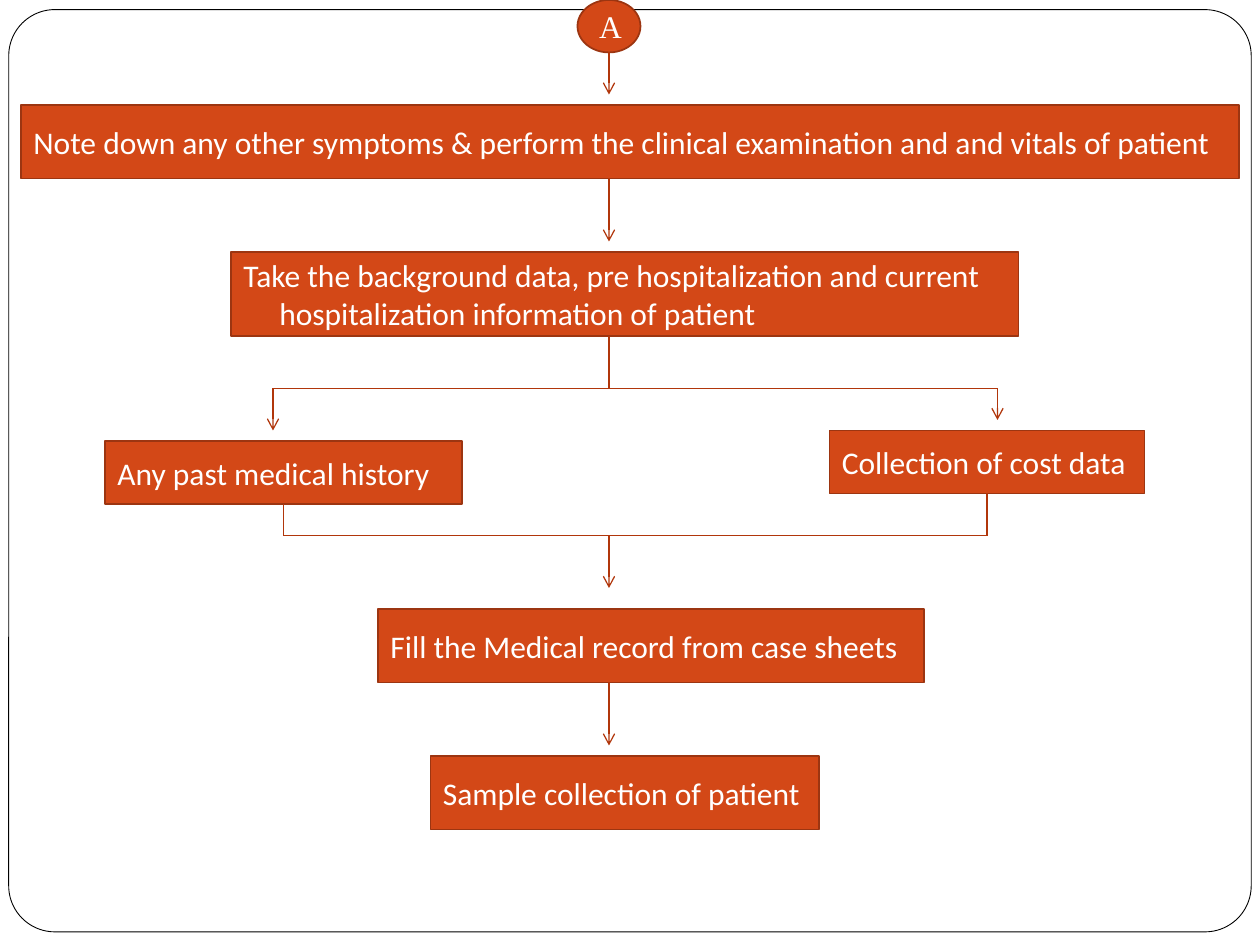
"""Build a patient data collection flowchart slide."""
from lxml import etree
from pptx import Presentation
from pptx import util as u
from pptx.dml.color import RGBColor
from pptx.enum import shapes, text
from pptx.oxml.ns import qn

COLORS = {"fill": "D34817", "edge": "9C3511", "arrow": "B1360B",
          "white": "FFFFFF", "black": "000000"}
AXIS = 348
SPLIT_Y, MERGE_Y = 222, 306
SPLIT_X, MERGE_X = (156, 570), (162, 564)
HANGING = 20.5

STEPS = [
    ("Note down any other symptoms & perform the clinical examination and and vitals of patient",
     (12, 60, 696, 42), 0),
    ("Take the background data, pre hospitalization and current hospitalization information of patient",
     (132, 144, 450, 48), HANGING),
    ("Any past medical history", (60, 252, 204, 36), 0),
    ("Fill the Medical record from case sheets", (216, 348, 312, 42), 0),
    ("Collection of cost data", (474, 246, 180, 36), 0),
    ("Sample collection of patient", (246, 432, 222, 42), 0),
]
ARROWS = [(AXIS, 30, 54), (AXIS, 102, 138), (SPLIT_X[0], SPLIT_Y, 246),
          (SPLIT_X[1], SPLIT_Y, 240), (AXIS, MERGE_Y, 336), (AXIS, 390, 426)]
STEMS = [(AXIS, 192, SPLIT_Y), (MERGE_X[0], 288, MERGE_Y), (MERGE_X[1], 282, MERGE_Y)]
BARS = [(SPLIT_X, SPLIT_Y), (MERGE_X, MERGE_Y)]


def color(name):
    return RGBColor.from_string(COLORS[name])


def add_box(page, kind, place, fill, edge, weight):
    box = page.shapes.add_shape(kind, *map(u.Pt, place))
    box.shadow.inherit = False
    box.fill.solid()
    box.fill.fore_color.rgb = color(fill)
    box.line.color.rgb = color(edge)
    box.line.width = u.Pt(weight)
    return box


def write(box, words, font, align):
    frame = box.text_frame
    frame.word_wrap = True
    frame.vertical_anchor = text.MSO_ANCHOR.MIDDLE
    para = frame.paragraphs[0]
    para.text = words
    para.alignment = align
    para.font.name = font
    para.font.size = u.Pt(18)
    para.font.color.rgb = color("white")
    return para


def add_step(page, words, place, hanging):
    box = add_box(page, shapes.MSO_SHAPE.RECTANGLE, place, "fill", "edge", 1)
    para = write(box, words, "Calibri", text.PP_ALIGN.LEFT)
    para.space_after = u.Pt(10)
    if hanging:
        properties = para._p.get_or_add_pPr()
        properties.set("marL", str(u.Pt(hanging)))
        properties.set("indent", str(-u.Pt(hanging)))


def add_line(page, start, end, arrow=False):
    line = page.shapes.add_connector(shapes.MSO_CONNECTOR.STRAIGHT,
                                     *map(u.Pt, start + end))
    line.line.color.rgb = color("arrow")
    line.line.width = u.Pt(0.75)
    if arrow:
        etree.SubElement(line.line._get_or_add_ln(), qn("a:tailEnd"), type="arrow")
    etree.SubElement(line._element.spPr, qn("a:effectLst"))


def main():
    deck = Presentation()
    deck.slide_width, deck.slide_height = u.Pt(720), u.Pt(540)
    page = deck.slides.add_slide(deck.slide_layouts[6])

    border = add_box(page, shapes.MSO_SHAPE.ROUNDED_RECTANGLE,
                     (5, 5.5, 710, 527), "white", "black", 0.5)
    border.adjustments[0] = 0.05
    for step in STEPS:
        add_step(page, *step)
    link = add_box(page, shapes.MSO_SHAPE.OVAL, (AXIS - 18, 0, 36, 30), "fill", "edge", 1)
    write(link, "A", "Times New Roman", text.PP_ALIGN.CENTER)

    for x, top, bottom in ARROWS:
        add_line(page, (x, top), (x, bottom), arrow=True)
    for x, top, bottom in STEMS:
        add_line(page, (x, top), (x, bottom))
    for (left, right), y in BARS:
        add_line(page, (left, y), (right, y))
    deck.save("out.pptx")


if __name__ == "__main__":
    main()
